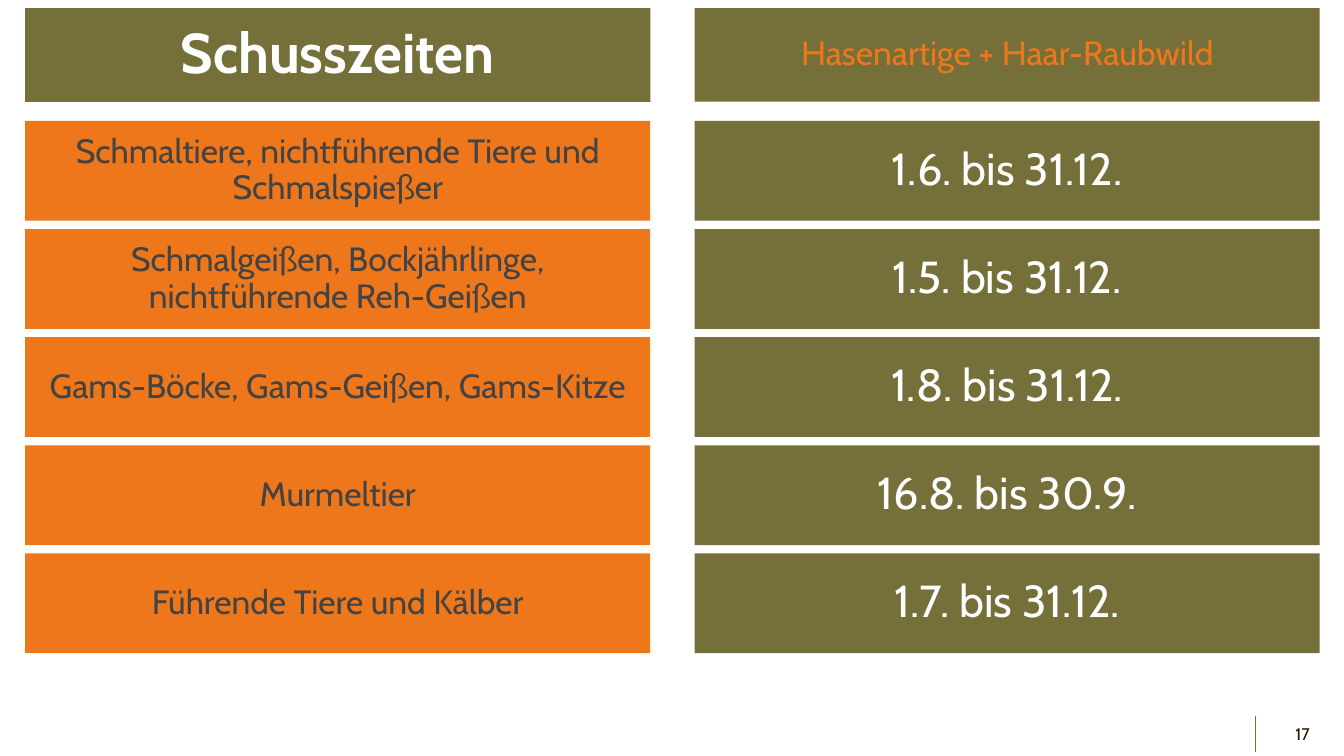
from lxml import etree
from pptx import Presentation
from pptx import util as u
from pptx.dml.color import RGBColor
from pptx.enum import shapes, text
from pptx.oxml import ns

OLIVE = RGBColor(0x75, 0x6F, 0x3A)
ORANGE = RGBColor(0xEE, 0x77, 0x1B)
GREY = RGBColor(0x43, 0x43, 0x43)
WHITE = RGBColor(0xFF, 0xFF, 0xFF)
BROWN = RGBColor(0x23, 0x10, 0x01)

WIDE, HIGH = 13.33, 7.5
LEFT, RIGHT, COL = 0.25, 6.89, 6.2
HEAD, BAND = 0.08, 0.93
FIRST, LAST, ROW = 1.2, 5.49, 0.99

SEASONS = [
    ("Schmaltiere, nichtführende Tiere und Schmalspießer", "1.6. bis 31.12."),
    ("Schmalgeißen, Bockjährlinge, nichtführende Reh-Geißen", "1.5. bis 31.12."),
    ("Gams-Böcke, Gams-Geißen, Gams-Kitze", "1.8. bis 31.12."),
    ("Murmeltier", "16.8. bis 30.9."),
    ("Führende Tiere und Kälber", "1.7. bis 31.12."),
]


def write(shape, words, size=24, color=WHITE, bold=False,
          align=text.PP_ALIGN.CENTER, lead=0.9):
    frame = shape.text_frame
    frame.word_wrap = True
    frame.auto_size = text.MSO_AUTO_SIZE.NONE
    frame.vertical_anchor = text.MSO_ANCHOR.MIDDLE
    para = frame.paragraphs[0]
    para.alignment = align
    para.line_spacing = lead
    para.space_before = u.Pt(0)
    run = para.add_run()
    run.text = words
    font = run.font
    font.name = "Cabin"
    font.size = u.Pt(size)
    font.bold = bold
    font.color.rgb = color


def paint(shape, fill):
    shape.fill.solid()
    shape.fill.fore_color.rgb = fill
    shape.line.fill.background()


def title(slide, words):
    head = slide.shapes.title
    head.left, head.top = u.Inches(LEFT), u.Inches(HEAD)
    head.width, head.height = u.Inches(COL), u.Inches(BAND)
    paint(head, OLIVE)
    write(head, words, size=40, bold=True)


def panel(slide, left, top, high, fill, words, **form):
    box = slide.shapes.add_shape(
        shapes.MSO_SHAPE.RECTANGLE, u.Inches(left), u.Inches(top),
        u.Inches(COL), u.Inches(high))
    box.shadow.inherit = False
    paint(box, fill)
    write(box, words, **form)


def footer(slide, page):
    rule = slide.shapes.add_connector(
        shapes.MSO_CONNECTOR.STRAIGHT, u.Inches(12.45), u.Inches(7.1),
        u.Inches(12.45), u.Inches(7.46))
    rule.line.color.rgb = OLIVE
    rule.line.width = u.Pt(0.75)
    etree.SubElement(rule._element.spPr, ns.qn("a:effectLst"))
    box = slide.shapes.add_textbox(
        u.Inches(12.58), u.Inches(7.08), u.Inches(0.51), u.Inches(0.4))
    write(box, page, size=12, color=BROWN, align=text.PP_ALIGN.RIGHT, lead=1.0)


def main():
    deck = Presentation()
    deck.slide_width, deck.slide_height = u.Inches(WIDE), u.Inches(HIGH)
    slide = deck.slides.add_slide(deck.slide_layouts.get_by_name("Title Only"))
    title(slide, "Schusszeiten")
    panel(slide, RIGHT, HEAD, BAND, OLIVE, "Hasenartige + Haar-Raubwild",
          color=ORANGE)
    step = (LAST - FIRST) / (len(SEASONS) - 1)
    for i, (game, dates) in enumerate(SEASONS):
        top = FIRST + i * step
        panel(slide, LEFT, top, ROW, ORANGE, game, color=GREY)
        panel(slide, RIGHT, top, ROW, OLIVE, dates, size=32)
    footer(slide, "17")
    deck.save("out.pptx")


if __name__ == "__main__":
    main()
